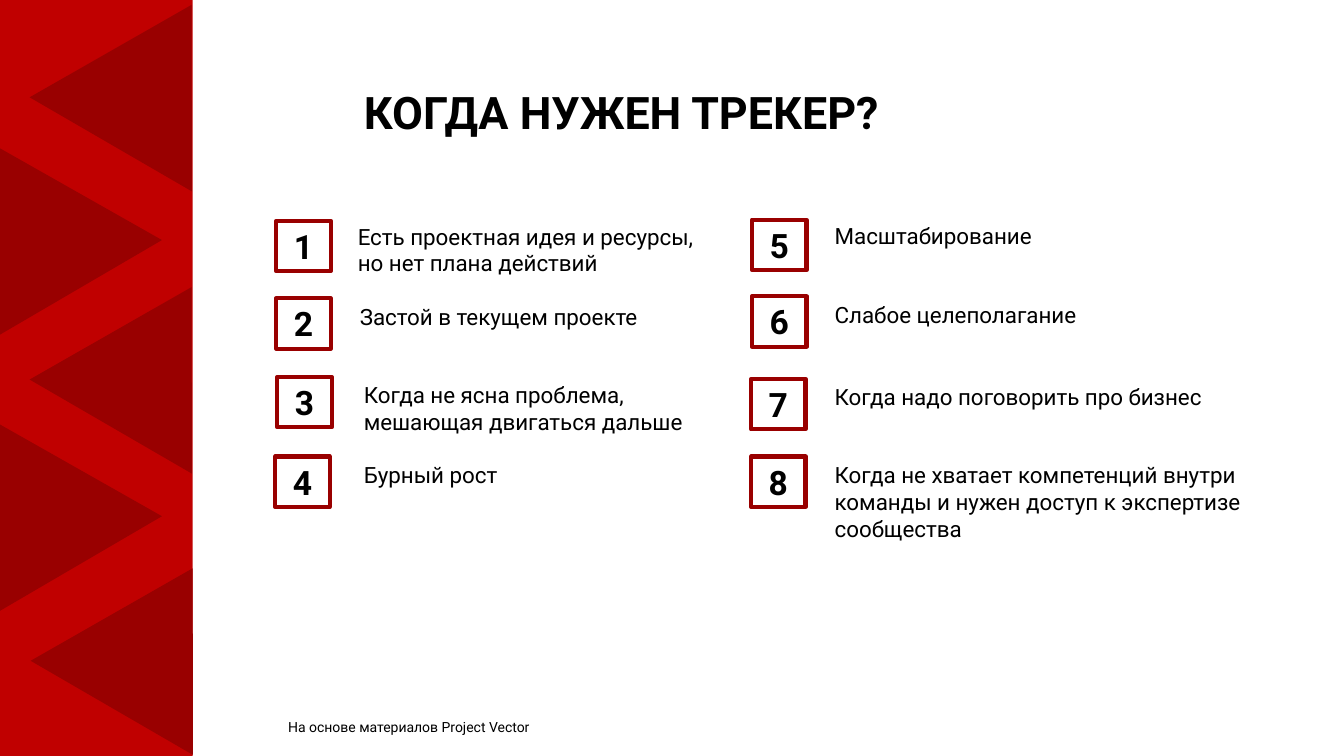
import pptx
import pptx.util
import pptx.dml.color
import pptx.enum.shapes
import pptx.enum.text

Inches = pptx.util.Inches
Kind = pptx.enum.shapes.MSO_SHAPE
Align = pptx.enum.text.PP_ALIGN
Anchor = pptx.enum.text.MSO_ANCHOR

COLORS = {"band": "C00000", "dark": "990000", "text": "000000"}
FONT = "Roboto"
TITLE = "КОГДА НУЖЕН ТРЕКЕР?"
SOURCE = "На основе материалов Project Vector"
PEAKS = [(0.57, -0.06), (-0.53, 1.36), (0.57, 2.74), (-0.53, 4.1), (0.58, 5.53)]
TILTS = (30.1, 329.7)
BOX = (0.54, 0.5)
LINE = 0.27
ITEMS = [
    ("Есть проектная идея и ресурсы,\nно нет плана действий", (2.74, 2.19), (3.45, 2.16), 3.82, 2),
    ("Застой в текущем проекте", (2.74, 2.96), (3.47, 2.96), 3.82, 1),
    ("Когда не ясна проблема, мешающая двигаться дальше", (2.75, 3.74), (3.51, 3.73), 3.37, 2),
    ("Бурный рост", (2.73, 4.53), (3.51, 4.53), 3.17, 1),
    ("Масштабирование", (7.46, 2.18), (8.18, 2.15), 3.92, 1),
    ("Слабое целеполагание", (7.46, 2.94), (8.18, 2.94), 4.06, 1),
    ("Когда надо поговорить про бизнес", (7.45, 3.76), (8.18, 3.75), 4.4, 1),
    ("Когда не хватает компетенций внутри команды и нужен доступ к экспертизе сообщества",
     (7.45, 4.53), (8.18, 4.53), 4.4, 3),
]

deck = pptx.Presentation()
deck.slide_width, deck.slide_height = Inches(13.33), Inches(7.5)
slide = deck.slides.add_slide(deck.slide_layouts[6])


def color(name):
    return pptx.dml.color.RGBColor.from_string(COLORS[name])


def write(shape, text, size=16, bold=False, align=Align.LEFT, anchor=Anchor.TOP, space=None):
    frame = shape.text_frame
    frame.word_wrap = True
    frame.vertical_anchor = anchor
    frame.text = text
    for para in frame.paragraphs:
        para.alignment = align
        if space:
            para.line_spacing = space
        for run in para.runs:
            run.font.name = FONT
            run.font.size = pptx.util.Pt(size)
            run.font.bold = bold
            run.font.color.rgb = color("text")


def draw(kind, left, top, width, height, fill=None, line=None):
    shape = slide.shapes.add_shape(kind, *map(Inches, (left, top, width, height)))
    shape.shadow.inherit = False
    if fill:
        shape.fill.solid()
        shape.fill.fore_color.rgb = color(fill)
    else:
        shape.fill.background()
    if line:
        shape.line.color.rgb = color(line)
        shape.line.width = pptx.util.Pt(3)
    else:
        shape.line.fill.background()
    return shape


def label(text, left, top, width, height, **style):
    box = slide.shapes.add_textbox(*map(Inches, (left, top, width, height)))
    write(box, text, **style)
    box.text_frame.auto_size = pptx.enum.text.MSO_AUTO_SIZE.SHAPE_TO_FIT_TEXT


draw(Kind.RECTANGLE, 0, 0, 1.91, 7.5, fill="band")
for order, (left, top) in enumerate(PEAKS):
    peak = draw(Kind.ISOSCELES_TRIANGLE, left, top, 1.86, 1.6, fill="dark")
    peak.rotation = TILTS[order % 2]

label(TITLE, 3.51, 0.79, 8.73, 0.64, size=32, bold=True)
for number, (text, spot, place, width, rows) in enumerate(ITEMS, 1):
    badge = draw(Kind.RECTANGLE, *spot, *BOX, line="dark")
    write(badge, str(number), size=24, bold=True, align=Align.CENTER, anchor=Anchor.MIDDLE)
    label(text, *place, width, 0.1 + rows * LINE)
label(SOURCE, 2.76, 7.07, 5.48, 0.27, size=10, space=1.07)

deck.save("out.pptx")
